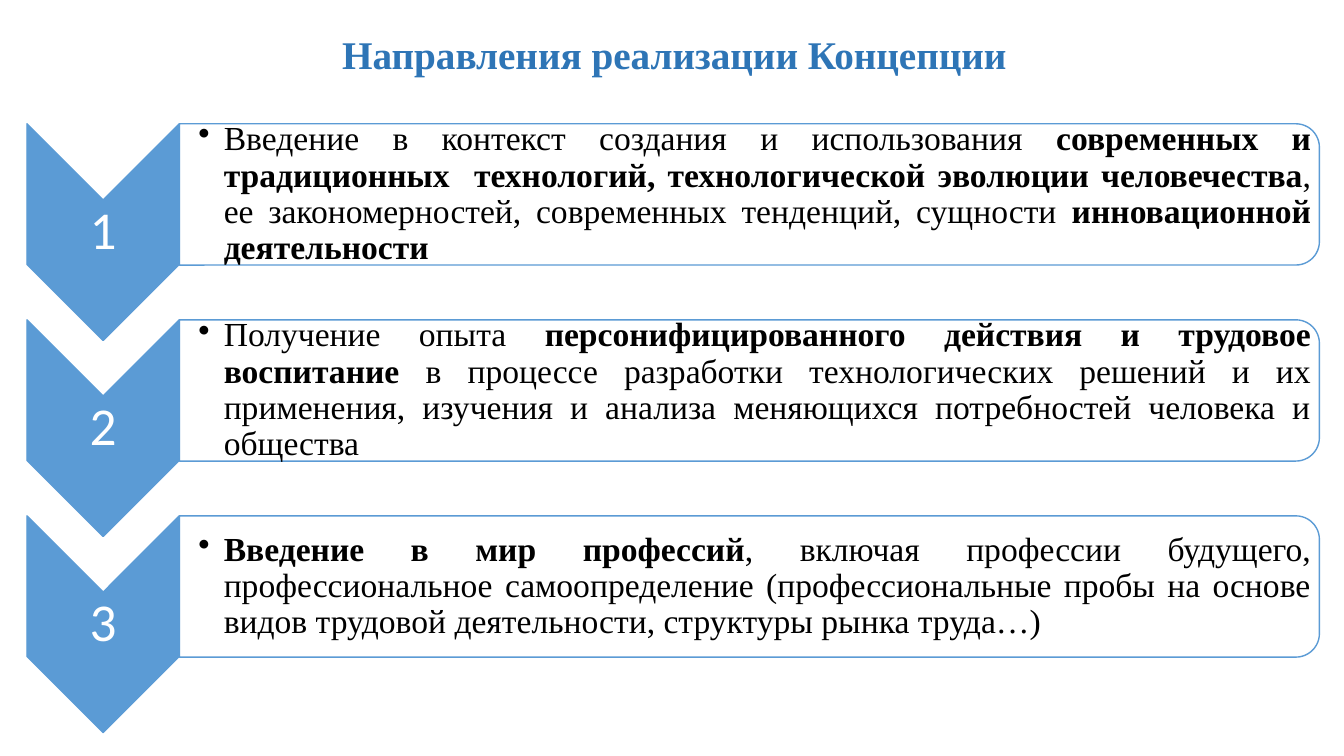
from dataclasses import dataclass

from lxml import etree
from pptx import Presentation
from pptx.dml.color import RGBColor
from pptx.enum.shapes import MSO_SHAPE
from pptx.enum.text import MSO_ANCHOR, MSO_AUTO_SIZE, PP_ALIGN
from pptx.oxml.ns import qn
from pptx.util import Cm, Pt

CHEVRON = MSO_SHAPE.CHEVRON
PANEL = MSO_SHAPE.ROUND_2_SAME_RECTANGLE
TOP, MIDDLE = MSO_ANCHOR.TOP, MSO_ANCHOR.MIDDLE
CENTER, JUSTIFY = PP_ALIGN.CENTER, PP_ALIGN.JUSTIFY
NO_AUTOFIT = MSO_AUTO_SIZE.NONE
TITLE_ONLY = 5


@dataclass(frozen=True)
class Theme:
    accent: RGBColor = RGBColor(0x5B, 0x9B, 0xD5)
    title: RGBColor = RGBColor(0x2E, 0x75, 0xB6)
    white: RGBColor = RGBColor(0xFF, 0xFF, 0xFF)
    black: RGBColor = RGBColor(0, 0, 0)
    serif: str = "Times New Roman"
    sans: str = "Calibri"
    title_size: int = 28
    number_size: int = 38
    body_size: int = 24
    panel_opacity: int = 90


THEME = Theme()

TITLE = "Направления реализации Концепции"
# Each direction is a list of (text, bold) runs.
DIRECTIONS = [
    [("Введение в контекст создания и использования ", False),
     ("современных и традиционных  технологий, технологической эволюции "
      "человечества", True),
     (", ее закономерностей, современных тенденций, сущности ", False),
     ("инновационной деятельности", True)],
    [("Получение опыта ", False),
     ("персонифицированного действия и трудовое воспитание ", True),
     ("в процессе разработки технологических решений и их применения, "
      "изучения и анализа меняющихся потребностей человека и общества", False)],
    [("Введение в мир профессий", True),
     (", включая профессии будущего, профессиональное самоопределение "
      "(профессиональные пробы на основе видов трудовой деятельности, "
      "структуры рынка труда…)", False)],
]


def write(tf, runs, *, font, size, color, align=CENTER, anchor=MIDDLE,
          margins=(0.25, 0.13, 0.25, 0.13), bullet=False):
    """Fill a text frame with (text, bold) runs; margins are in cm."""
    tf.word_wrap = True
    tf.auto_size = NO_AUTOFIT
    tf.vertical_anchor = anchor
    tf.margin_left, tf.margin_top, tf.margin_right, tf.margin_bottom = map(Cm, margins)
    p = tf.paragraphs[0]
    if bullet:
        add_bullet(p, 0.64)
    p.alignment = align
    p.line_spacing = 0.9
    for text, bold in runs:
        r = p.add_run()
        r.text = text
        r.font.name, r.font.size, r.font.bold = font, Pt(size), bold
        r.font.color.rgb = color


def add_bullet(p, indent):
    pPr = p._p.get_or_add_pPr()
    pPr.set("marL", str(Cm(indent)))
    pPr.set("indent", str(-Cm(indent)))
    etree.SubElement(pPr, qn("a:buChar")).set("char", "•")


def add_text(slide, left, top, width, height, runs, **style):
    sp = slide.shapes.add_textbox(Cm(left), Cm(top), Cm(width), Cm(height))
    write(sp.text_frame, runs, **style)


def add_turned(slide, kind, left, top, width, height, fill, opacity=100):
    """Add a shape turned by 90° that covers the given visible box (cm)."""
    shift = (width - height) / 2
    sp = slide.shapes.add_shape(kind, Cm(left + shift), Cm(top - shift),
                                Cm(height), Cm(width))
    sp.rotation = 90
    sp.shadow.inherit = False
    sp.fill.solid()
    sp.fill.fore_color.rgb = fill
    if opacity < 100:
        color = sp._element.spPr.find(qn("a:solidFill"))[0]
        etree.SubElement(color, qn("a:alpha")).set("val", str(opacity * 1000))
    sp.line.color.rgb = THEME.accent
    sp.line.width = Pt(1)


def add_title(slide, left, top, width, height):
    sp = slide.shapes.title
    sp.left, sp.top, sp.width, sp.height = Cm(left), Cm(top), Cm(width), Cm(height)
    write(sp.text_frame, [(TITLE, True)], font=THEME.serif, size=THEME.title_size,
          color=THEME.title, anchor=TOP, margins=(0.25, 0.4, 0.25, 0.13))


def add_direction(slide, number, runs, left, top, width, height):
    """Draw one numbered chevron with its panel inside the given box."""
    chevron_w, panel_h = 3.84, 3.56
    panel_left, panel_w = left + chevron_w, width - chevron_w
    add_turned(slide, CHEVRON, left, top, chevron_w, height, THEME.accent)
    add_text(slide, left, top + chevron_w / 2, chevron_w, height - chevron_w,
             [(str(number), False)], font=THEME.sans, size=THEME.number_size,
             color=THEME.white, margins=(0.08,) * 4)
    add_turned(slide, PANEL, panel_left, top, panel_w, panel_h, THEME.white,
               THEME.panel_opacity)
    inset = 0.17
    add_text(slide, panel_left, top + inset, panel_w - inset, panel_h - 2 * inset,
             runs, font=THEME.serif, size=THEME.body_size, color=THEME.black,
             align=JUSTIFY, margins=(0.48, 0.04, 0.04, 0.04), bullet=True)


def add_directions(slide, left, top, width, height):
    row_h = 5.46
    pitch = (height - row_h) / (len(DIRECTIONS) - 1)
    for i, runs in enumerate(DIRECTIONS):
        add_direction(slide, i + 1, runs, left, top + i * pitch, width, row_h)


def main():
    prs = Presentation()
    prs.slide_width, prs.slide_height = Cm(33.87), Cm(19.05)
    slide = prs.slides.add_slide(prs.slide_layouts[TITLE_ONLY])
    add_title(slide, 2.39, 0.5, 29.21, 3.68)
    add_directions(slide, 0.68, 3.12, 32.57, 15.34)
    prs.save("out.pptx")


if __name__ == "__main__":
    main()
